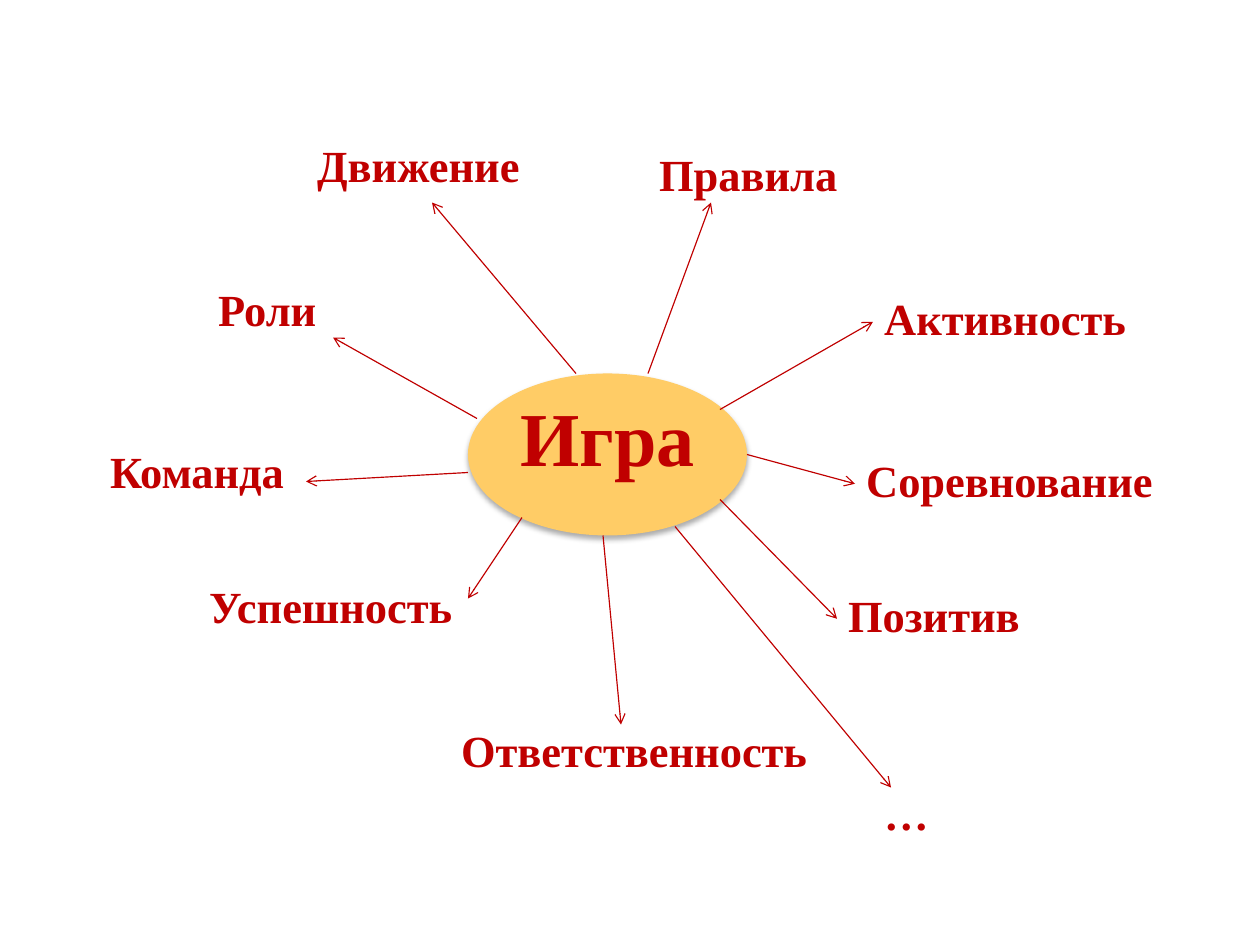
import pptx
import pptx.dml.color
import pptx.enum.shapes
import pptx.enum.text
import pptx.oxml
import pptx.oxml.ns
import pptx.util

RED = pptx.dml.color.RGBColor(0xC0, 0x00, 0x00)
YELLOW = pptx.dml.color.RGBColor(0xFF, 0xCC, 0x66)
FONT = "Times New Roman"
WIDTH, HEIGHT = pptx.util.Cm(28), pptx.util.Cm(21)
COLUMNS, ROWS = 140, 105
LABEL_ROWS = 6.5
LEFT_SIDE = 1

# Word, column, row, width in columns, arrow start, arrow tip.
# Without a tip the arrow joins the left side of the word.
IDEAS = [
    ("Движение", 34, 15.5, 35, (64, 41.5), (48, 22.5)),
    ("Правила", 72, 16.5, 35, (72, 41.5), (79, 22.5)),
    ("Роли", 23, 31.5, 35, (53, 46.5), (37, 37.5)),
    ("Команда", 11, 49.5, 35, (52, 52.5), (34, 53.5)),
    ("Активность", 97, 32.5, 35, (80, 45.5), None),
    ("Соревнование", 95, 50.5, 35, (83, 50.5), None),
    ("Позитив", 93, 65.5, 35, (80, 55.5), None),
    ("Успешность", 22, 64.5, 35, (58, 57.5), (52, 66.5)),
    ("Ответственность", 50, 80.5, 44, (67, 59.5), (69, 80.5)),
    ("…", 97, 87.5, 12, (75, 58.5), (99, 87.5)),
]


def x(columns):
    return round(WIDTH * columns / COLUMNS)


def y(rows):
    return round(HEIGHT * rows / ROWS)


def add_xml(parent, tag, attributes="", content=""):
    namespace = pptx.oxml.ns.nsdecls("a")
    parent.append(pptx.oxml.parse_xml(
        f"<a:{tag} {namespace} {attributes}>{content}</a:{tag}>"))


def write_word(holder, word, size, alignment):
    frame = holder.text_frame
    frame.word_wrap = True
    frame.vertical_anchor = pptx.enum.text.MSO_ANCHOR.TOP
    frame.text = word
    paragraph = frame.paragraphs[0]
    paragraph.alignment = alignment
    paragraph.line_spacing = 0.87
    hanging = pptx.util.Inches(0.23)
    properties = paragraph._p.get_or_add_pPr()
    properties.set("marL", str(hanging))
    properties.set("indent", str(-hanging))
    font = paragraph.runs[0].font
    font.name = FONT
    font.size = pptx.util.Pt(size)
    font.bold = True
    font.color.rgb = RED


def add_topic(slide, word, column, row, columns, rows):
    topic = slide.shapes.add_shape(
        pptx.enum.shapes.MSO_SHAPE.OVAL, x(column), y(row), x(columns), y(rows))
    topic.fill.solid()
    topic.fill.fore_color.rgb = YELLOW
    topic.line.fill.background()
    # Soft shadow below the oval
    topic.shadow.inherit = False
    effects = topic._element.spPr.find(pptx.oxml.ns.qn("a:effectLst"))
    blur, distance = pptx.util.Pt(3.5), pptx.util.Pt(2.2)
    add_xml(effects, "outerShdw",
            f'blurRad="{blur}" dist="{distance}" dir="5400000" rotWithShape="0"',
            '<a:srgbClr val="000000"><a:alpha val="32000"/></a:srgbClr>')
    write_word(topic, word, 48, pptx.enum.text.PP_ALIGN.CENTER)


def add_label(slide, word, column, row, columns):
    label = slide.shapes.add_textbox(x(column), y(row), x(columns), y(LABEL_ROWS))
    write_word(label, word, 28, pptx.enum.text.PP_ALIGN.LEFT)
    label.text_frame.auto_size = pptx.enum.text.MSO_AUTO_SIZE.SHAPE_TO_FIT_TEXT
    return label


def add_arrow(slide, start, tip, label):
    end = tip or start
    arrow = slide.shapes.add_connector(
        pptx.enum.shapes.MSO_CONNECTOR.STRAIGHT,
        x(start[0]), y(start[1]), x(end[0]), y(end[1]))
    if tip is None:
        arrow.end_connect(label, LEFT_SIDE)
    arrow.line.color.rgb = RED
    arrow.line.width = pptx.util.Pt(0.75)
    line = arrow._element.spPr.find(pptx.oxml.ns.qn("a:ln"))
    add_xml(line, "tailEnd", 'type="arrow"')
    add_xml(arrow._element.spPr, "effectLst")


def main():
    deck = pptx.Presentation()
    deck.slide_width, deck.slide_height = WIDTH, HEIGHT
    slide = deck.slides.add_slide(deck.slide_layouts[6])

    # Central topic
    add_topic(slide, "Игра", 52, 41.5, 31, 18)

    # Ideas around it, each with its arrow
    for word, column, row, columns, start, tip in IDEAS:
        label = add_label(slide, word, column, row, columns)
        add_arrow(slide, start, tip, label)

    deck.save("out.pptx")


if __name__ == "__main__":
    main()
